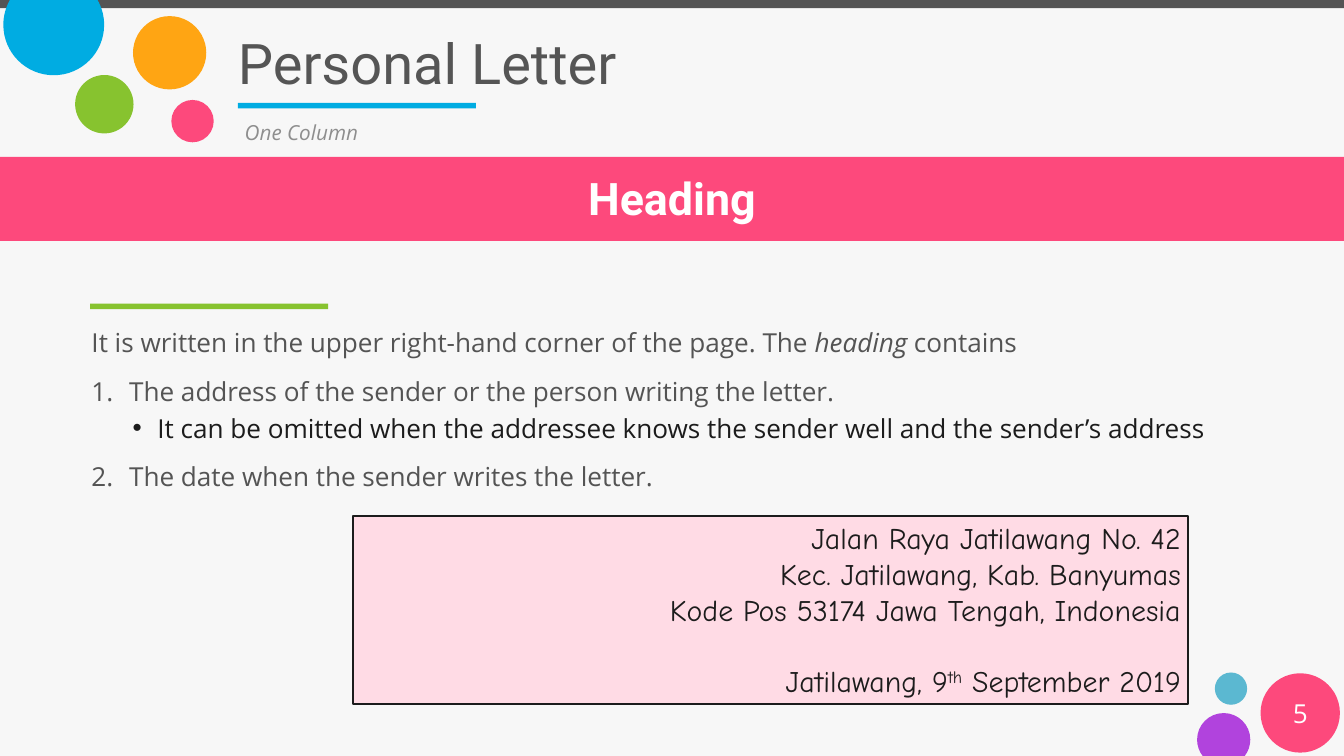
from itertools import pairwise
from math import asin, cos, pi, sin, tan

from lxml.etree import SubElement
from pptx import Presentation
from pptx.dml.color import RGBColor as RGB
from pptx.enum.shapes import MSO_SHAPE as Kind
from pptx.enum.text import MSO_ANCHOR as Anchor, MSO_AUTO_SIZE as Fit, PP_ALIGN as Align
from pptx.oxml.ns import qn
from pptx.util import Pt

WIDE, HIGH = 1440, 810
PAPER = RGB(0xF7, 0xF7, 0xF7)
GRAY = RGB(0x54, 0x54, 0x54)
PALE = RGB(0x8E, 0x8E, 0x8E)
INK = RGB(0x1C, 0x1C, 0x1C)
WHITE = RGB(0xFF, 0xFF, 0xFF)
PINK = RGB(0xFD, 0x49, 0x7C)
BLUSH = RGB(0xFF, 0xDB, 0xE5)
BLUE = RGB(0x00, 0xAC, 0xE2)
GREEN = RGB(0x87, 0xC3, 0x2F)
GOLD = RGB(0xFF, 0xA5, 0x13)
TEAL = RGB(0x5B, 0xB8, 0xD1)
PLUM = RGB(0xB1, 0x43, 0xDD)

PLAIN = {"name": "Open Sans", "size": Pt(28), "color": GRAY}
TITLE = {"name": "Roboto", "size": Pt(60), "color": RGB(0x55, 0x55, 0x55)}
HEAD = {"name": "Roboto", "size": Pt(48), "color": WHITE, "bold": True}
SUB = {"name": "Open Sans", "size": Pt(22.2), "color": PALE, "italic": True}
HAND = {"name": "Comic Neue", "size": Pt(32), "color": INK}
PAGE = PLAIN | {"color": WHITE}
LOOSE = {"line_spacing": 1.2, "space_before": Pt(12)}
ROOMY = {"margin_left": Pt(13), "margin_right": Pt(13),
         "margin_top": Pt(6.5), "margin_bottom": Pt(6.5)}


def apply(item, form):
    """Set each format value on the item."""
    for key, value in form.items():
        if key == "color":
            item.color.rgb = value
        else:
            setattr(item, key, value)


def place(shape, box):
    """Move a shape to a box given in points."""
    apply(shape, dict(zip(("left", "top", "width", "height"), map(Pt, box))))


def paint(shape, fill):
    """Give a shape a flat fill with no line or shadow."""
    shape.shadow.inherit = False
    shape.fill.solid()
    shape.fill.fore_color.rgb = fill
    shape.line.fill.background()
    return shape


def draw(slide, kind, box, fill):
    """Add a flat preset shape."""
    return paint(slide.shapes.add_shape(kind, *map(Pt, box)), fill)


def arc(slide, mid, size, edge, fill):
    """Add a circle cut flat at the slide edge, with one curve per quarter."""
    x, y = mid
    tilt = asin((edge - y) / size)
    start = tilt if edge < y else pi - tilt
    base = 0 if edge < y else pi
    stops = (start, base, base + pi / 2, base + pi, 2 * base + pi - start
             if edge < y else 2 * pi + tilt)
    dots = [(x + size * cos(start), y + size * sin(start))]
    for one, two in pairwise(stops):
        pull = size * 4 / 3 * tan((two - one) / 4)
        for turn, way in ((one, pull), (two, -pull), (two, 0)):
            dots.append((x + size * cos(turn) - way * sin(turn),
                         y + size * sin(turn) + way * cos(turn)))
    dots = [(Pt(left), Pt(top)) for left, top in dots]
    pen = slide.shapes.build_freeform(*dots[0], scale=1.0)
    pen.add_line_segments(dots[1:], close=True)
    shape = paint(pen.convert_to_shape(), fill)
    lines = list(shape._element.iter(qn("a:lnTo")))
    for step in range(0, 12, 3):
        first, *rest = lines[step:step + 3]
        first.tag = qn("a:cubicBezTo")
        for line in rest:
            first.append(line[0])
            line.getparent().remove(line)


def setup(shape, form):
    """Prepare a text frame with wrapping and a fixed size."""
    frame = shape.text_frame
    apply(frame, {"word_wrap": True, "auto_size": Fit.NONE} | form)
    return frame


def write(para, runs, form, look):
    """Fill a paragraph with pairs of text and font changes."""
    apply(para, form)
    for text, change in runs:
        run = para.add_run()
        run.text = text
        apply(run.font, look | change)


def mark(para, left, hang, tag, **facts):
    """Set a paragraph's indent and bullet."""
    props = para._p.get_or_add_pPr()
    props.set("marL", str(Pt(left)))
    props.set("indent", str(-Pt(hang)))
    if tag == "buChar":
        SubElement(props, qn("a:buFont"), typeface="Arial")
    SubElement(props, qn(f"a:{tag}"), **facts)


def decor(slide):
    """Draw the top bar, the corner circles and the two rules."""
    draw(slide, Kind.RECTANGLE, (0, 0, WIDE, 8.64), GRAY)
    for left, top, size, fill in (
        (183.6, 107.1, 45.4, PINK), (80.5, 80.4, 62.6, GREEN),
        (142.5, 17.3, 78.5, GOLD), (1301.6, 720.5, 34.6, TEAL),
        (1350.6, 721.4, 85, PINK),
    ):
        draw(slide, Kind.OVAL, (left, top, size, size), fill)
    arc(slide, (57.6, 26.6), 54, 0, BLUE)
    arc(slide, (1311.1, 792.5), 28.5, HIGH, PLUM)
    for left, top, fill in ((96.5, 325.4, GREEN), (254.9, 110.2, BLUE)):
        draw(slide, Kind.RECTANGLE, (left, top, 255, 5.8), fill)


def label(shape, box, text, form, look, anchor):
    """Place a one-line text in a box."""
    place(shape, box)
    frame = setup(shape, ROOMY | {"vertical_anchor": anchor})
    write(frame.paragraphs[0], [(text, {})], form, look)
    return frame.paragraphs[0]


def body(shape, box):
    """Place the main list in a box."""
    place(shape, box)
    frame = setup(shape, ROOMY | {"vertical_anchor": Anchor.TOP})
    count = (40.3, 40.3, "buAutoNum", {"type": "arabicPeriod"})
    tight = {"level": 1, "line_spacing": 1.0, "space_before": Pt(5.6)}
    rows = (
        ([("It is written in the upper right-hand corner of the page. The ", {}),
          ("heading", {"italic": True}), (" contains", {})],
         LOOSE, (0, 0, "buNone", {})),
        ([("The address of the sender or the person writing the letter.", {})],
         LOOSE, count),
        ([("It can be omitted when the addressee knows the sender well "
           "and the sender’s address", {"color": INK})],
         tight, (70.6, 26.6, "buChar", {"char": "•"})),
        ([("The date when the sender writes the letter.", {})], LOOSE, count),
    )
    for step, (runs, form, (left, hang, tag, facts)) in enumerate(rows):
        para = frame.add_paragraph() if step else frame.paragraphs[0]
        write(para, runs, form, PLAIN)
        mark(para, left, hang, tag, **facts)


def banner(slide, box):
    """Draw the full-width heading band."""
    shape = draw(slide, Kind.RECTANGLE, box, PINK)
    frame = setup(shape, {"vertical_anchor": Anchor.TOP})
    write(frame.paragraphs[0], [("Heading", {})],
          LOOSE | {"alignment": Align.CENTER}, HEAD)


def letter(slide, box):
    """Draw the framed sample of a letter heading."""
    shape = draw(slide, Kind.RECTANGLE, box, BLUSH)
    apply(shape.line, {"color": INK, "width": Pt(2)})
    frame = setup(shape, {"vertical_anchor": Anchor.TOP})
    lines = ("Jalan Raya Jatilawang No. 42", "Kec. Jatilawang, Kab. Banyumas",
             "Kode Pos 53174 Jawa Tengah, Indonesia")
    right = {"alignment": Align.RIGHT}
    for step, text in enumerate(lines):
        para = frame.add_paragraph() if step else frame.paragraphs[0]
        write(para, [(text, {})], right, HAND)
    date = frame.add_paragraph()
    write(date, [(text, {}) for text in ("Jatilawang, 9", "th", " September 2019")],
          right | {"space_before": Pt(38.4)}, HAND)
    date.runs[1]._r.get_or_add_rPr().set("baseline", "30000")


def main():
    """Build and save the slide."""
    deck = Presentation()
    apply(deck, {"slide_width": Pt(WIDE), "slide_height": Pt(HIGH)})
    slide = deck.slides.add_slide(deck.slide_layouts[3])
    slide.background.fill.solid()
    slide.background.fill.fore_color.rgb = PAPER
    title, text, sub = slide.placeholders
    decor(slide)
    left = {"alignment": Align.LEFT}
    label(title, (241.9, 19.4, 1129.7, 95), "Personal Letter", left, TITLE, Anchor.MIDDLE)
    body(text, (85, 336.6, 1275.8, 383))
    para = label(sub, (249.1, 121.7, 1128.2, 39.6), "One Column", left, SUB, Anchor.TOP)
    mark(para, 0, 0, "buNone")
    page = slide.shapes.add_textbox(0, 0, 0, 0)
    label(page, (1350.7, 742.6, 85, 43.2), "5", {"alignment": Align.CENTER}, PAGE, Anchor.MIDDLE)
    banner(slide, (0, 168.2, WIDE, 90))
    letter(slide, (378, 553, 894.6, 200.9))
    deck.save("out.pptx")


if __name__ == "__main__":
    main()
